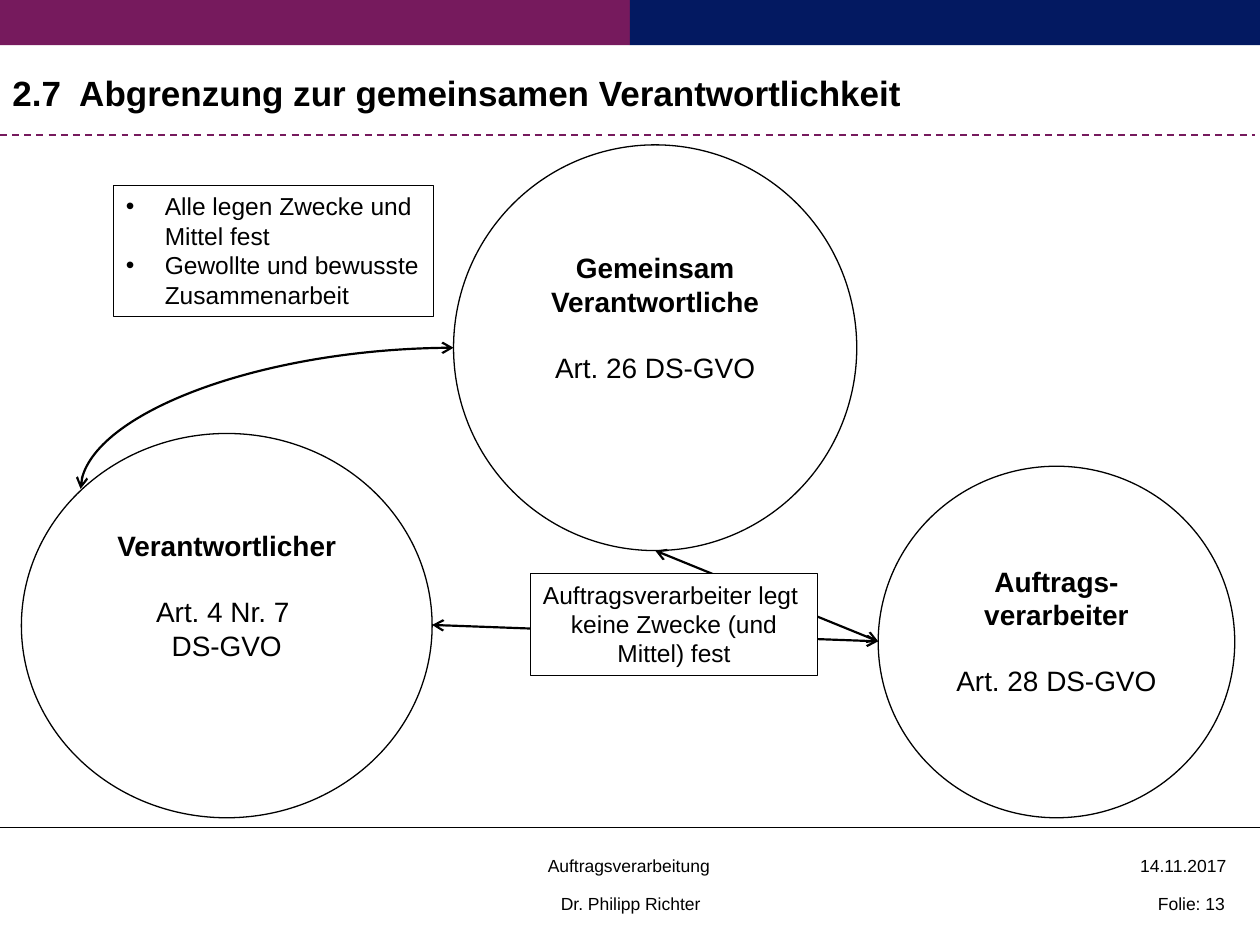
from lxml import etree
from pptx import Presentation
from pptx.dml.color import RGBColor
from pptx.enum.dml import MSO_LINE
from pptx.enum.shapes import MSO_CONNECTOR as Link, MSO_SHAPE as Shape
from pptx.enum.text import MSO_ANCHOR as Anchor, PP_ALIGN as Align
from pptx.oxml.ns import qn
from pptx.util import Inches, Pt

BLACK = RGBColor(0x00, 0x00, 0x00)
WHITE = RGBColor(0xFF, 0xFF, 0xFF)
PLUM = RGBColor(0x76, 0x1A, 0x5D)
NAVY = RGBColor(0x03, 0x19, 0x61)

prs = Presentation()
prs.slide_width, prs.slide_height = Inches(10), Inches(7.5)
slide = prs.slides.add_slide(prs.slide_layouts[6])
shapes = slide.shapes


def write(shape, lines, align, wrap=True, top=0.05):
    """Fill a shape with (text, format) lines, anchored at the top."""
    frame = shape.text_frame
    frame.word_wrap = wrap
    frame.vertical_anchor = Anchor.TOP
    frame.margin_top = Inches(top)
    for i, (text, font_format) in enumerate(lines):
        para = frame.paragraphs[0] if i == 0 else frame.add_paragraph()
        para.alignment = align
        run = para.add_run()
        run.text = text
        run.font.name = "Arial"
        run.font.color.rgb = BLACK
        for key, value in font_format.items():
            setattr(run.font, key, value)
    return frame.paragraphs


def connect(kind, start, end, color, width, arrows=False):
    """Draw a line, with open arrowheads at both ends if asked."""
    link = shapes.add_connector(kind, *map(Inches, start + end))
    link.line.color.rgb = color
    link.line.width = Pt(width)
    if arrows:
        ln = link.line._get_or_add_ln()
        for tag in ("a:headEnd", "a:tailEnd"):
            etree.SubElement(ln, qn(tag), type="arrow")
    etree.SubElement(link._element.spPr, qn("a:effectLst"))
    return link


# Colour bands across the top
for left, color in ((0, PLUM), (5, NAVY)):
    band = shapes.add_shape(Shape.RECTANGLE, Inches(left), 0, Inches(5), Inches(0.36))
    band.shadow.inherit = False
    band.fill.solid()
    band.fill.fore_color.rgb = color
    band.line.fill.background()

# Title and footer rules
title_rule = connect(Link.STRAIGHT, (0, 1.07), (9.96, 1.07), PLUM, 1)
title_rule.line.dash_style = MSO_LINE.DASH
connect(Link.STRAIGHT, (0, 6.57), (10, 6.57), BLACK, 0.75)

# Title
title = shapes.add_textbox(0, Inches(0.52), Inches(9.69), Inches(0.44))
write(title, [("2.7  Abgrenzung zur gemeinsamen Verantwortlichkeit",
               {"size": Pt(20), "bold": True})], Align.LEFT)

# Footer
for left, top, width, text, align in (
    (4.24, 6.74, 1.5, "Auftragsverarbeitung", Align.CENTER),
    (4.34, 7.04, 1.33, "Dr. Philipp Richter", Align.CENTER),
    (8.93, 6.74, 0.9, "14.11.2017", Align.RIGHT),
    (8.96, 7.04, 0.86, "Folie: 13", Align.RIGHT),
):
    footer = shapes.add_textbox(*map(Inches, (left, top, width, 0.27)))
    write(footer, [(text, {"size": Pt(10)})], align, wrap=False)

# Roles: place, top inset, heading, articles
for place, inset, role, articles in (
    ((6.97, 3.7, 2.83, 2.79), 0.37, "Auftrags-verarbeiter", ["Art. 28 DS-GVO"]),
    ((0.17, 3.44, 3.26, 3.05), 0.31, "Verantwortlicher", ["Art. 4 Nr. 7 ", "DS-GVO"]),
    ((3.6, 1.15, 3.2, 3.22), 0.37, "Gemeinsam Verantwortliche", ["Art. 26 DS-GVO"]),
):
    circle = shapes.add_shape(Shape.OVAL, *map(Inches, place))
    circle.shadow.inherit = False
    circle.fill.background()
    circle.line.color.rgb = BLACK
    circle.line.width = Pt(0.75)
    lines = [(role, {"size": Pt(16), "bold": True})]
    lines += [(article, {"size": Pt(16), "bold": False}) for article in articles]
    paras = write(circle, lines, Align.CENTER, top=inset)
    paras[1].space_before = Pt(18.4)

# Relations between the roles
connect(Link.STRAIGHT, (6.97, 5.09), (3.43, 4.96), BLACK, 1.25, arrows=True)
connect(Link.STRAIGHT, (5.2, 4.37), (6.97, 5.09), BLACK, 1.25, arrows=True)
joint = connect(Link.CURVE, (3.6, 2.76), (0.64, 3.88), BLACK, 1.25, arrows=True)
joint._element.spPr.find(qn("a:prstGeom")).set("prst", "curvedConnector2")

# Notes on the relations
for place, texts, align, bulleted in (
    ((4.21, 4.55, 2.28, 0.81),
     ["Auftragsverarbeiter legt ", "keine Zwecke (und Mittel) fest"], Align.CENTER, False),
    ((0.9, 1.47, 2.54, 1.04),
     ["Alle legen Zwecke und Mittel fest", "Gewollte und bewusste Zusammenarbeit"],
     Align.LEFT, True),
):
    remark = shapes.add_shape(Shape.RECTANGLE, *map(Inches, place))
    remark.shadow.inherit = False
    remark.fill.solid()
    remark.fill.fore_color.rgb = WHITE
    remark.line.color.rgb = BLACK
    remark.line.width = Pt(0.75)
    paras = write(remark, [(text, {"size": Pt(14)}) for text in texts], align)
    if bulleted:
        for para in paras:
            props = para._p.get_or_add_pPr()
            props.set("marL", str(Inches(0.31)))
            props.set("indent", str(Inches(-0.31)))
            etree.SubElement(props, qn("a:buFont"), typeface="Arial")
            etree.SubElement(props, qn("a:buChar"), char="•")

prs.save("out.pptx")
